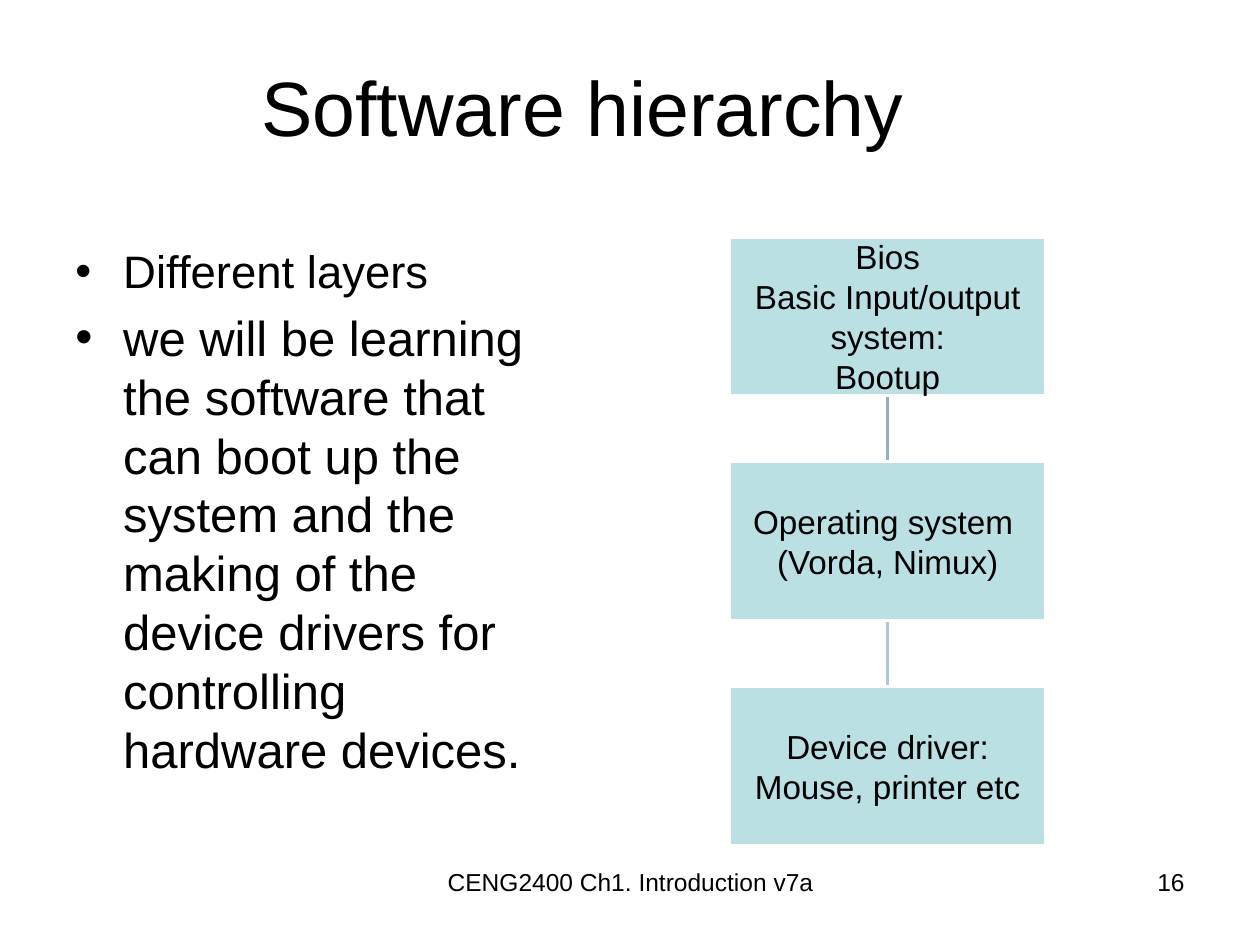
from lxml.etree import SubElement
from pptx import Presentation
from pptx.dml.color import RGBColor
from pptx.enum.shapes import MSO_CONNECTOR, MSO_SHAPE
from pptx.enum.text import MSO_ANCHOR as Anchor, PP_ALIGN as Align
from pptx.oxml.ns import qn
from pptx.util import Inches, Pt


def color(hex_string):
    return RGBColor.from_string(hex_string)


def write(shape, lines, sizes, align=Align.LEFT, anchor=Anchor.TOP,
          inset=None, bullet=None, indent=0.38):
    """Fill a shape with one paragraph per line; sizes has one entry per line."""
    frame = shape.text_frame
    frame.word_wrap = True
    frame.vertical_anchor = anchor
    if inset is not None:
        frame.margin_left = frame.margin_right = Inches(inset)
        frame.margin_top = frame.margin_bottom = Inches(inset)
    for index, (line, size) in enumerate(zip(lines, sizes)):
        paragraph = frame.paragraphs[0] if index == 0 else frame.add_paragraph()
        paragraph.alignment = align
        run = paragraph.add_run()
        run.text = line
        run.font.name = "Arial"
        run.font.size = Pt(size)
        run.font.color.rgb = color("000000")
        if bullet:
            paragraph.space_before = Pt(0.2 * size)
            properties = paragraph._p.get_or_add_pPr()
            properties.set("marL", str(Inches(indent)))
            properties.set("indent", str(-Inches(indent)))
            SubElement(properties, qn("a:buFont")).set("typeface", "Arial")
            SubElement(properties, qn("a:buChar")).set("char", bullet)


presentation = Presentation()
presentation.slide_width = Inches(10)
presentation.slide_height = Inches(7.5)
slide = presentation.slides.add_slide(presentation.slide_layouts[6])
shapes = slide.shapes

# Title
title = shapes.add_textbox(Inches(0.5), Inches(0.13), Inches(8.25), Inches(1.42))
write(title, ["Software hierarchy"], [44], align=Align.CENTER, anchor=Anchor.MIDDLE)

# Bullet list
body = shapes.add_textbox(Inches(0.5), Inches(1.88), Inches(3.83), Inches(4.82))
write(body, [
    "Different layers",
    "we will be learning the software that can boot up the system and the "
    "making of the device drivers for controlling hardware devices.",
], [26, 28], bullet="•")

# Links between layers, placed behind the boxes
links = []
for link_color in ("96B3B6", "AACBCE"):
    link = shapes.add_connector(MSO_CONNECTOR.STRAIGHT, 0, 0, 0, 0)
    link.line.color.rgb = color(link_color)
    link.line.width = Pt(2)
    SubElement(link._element.spPr, qn("a:effectLst"))
    links.append(link)

# Layer boxes
layers = [
    ["Bios", "Basic Input/output system:", "Bootup"],
    ["Operating system ", "(Vorda, Nimux)"],
    ["Device driver:", "Mouse, printer etc"],
]
boxes = []
for row, lines in enumerate(layers):
    box = shapes.add_shape(MSO_SHAPE.RECTANGLE, Inches(5.79), Inches(1.88 + 1.785 * row),
                           Inches(2.51), Inches(1.26))
    box.shadow.inherit = False
    box.fill.solid()
    box.fill.fore_color.rgb = color("BBE0E3")
    box.line.color.rgb = color("FFFFFF")
    box.line.width = Pt(2)
    write(box, lines, [19] * len(lines), align=Align.CENTER, anchor=Anchor.MIDDLE, inset=0.01)
    boxes.append(box)

# Join each box to the next one
for link, upper, lower in zip(links, boxes, boxes[1:]):
    link.begin_connect(upper, 2)
    link.end_connect(lower, 0)

# Footer and slide number
for left, width, text, align in (
    (3.42, 3.17, "CENG2400 Ch1. Introduction v7a", Align.CENTER),
    (7.17, 2.33, "16", Align.RIGHT),
):
    footer = shapes.add_textbox(Inches(left), Inches(6.83), Inches(width), Inches(0.52))
    write(footer, [text], [14], align=align)

presentation.save("out.pptx")
